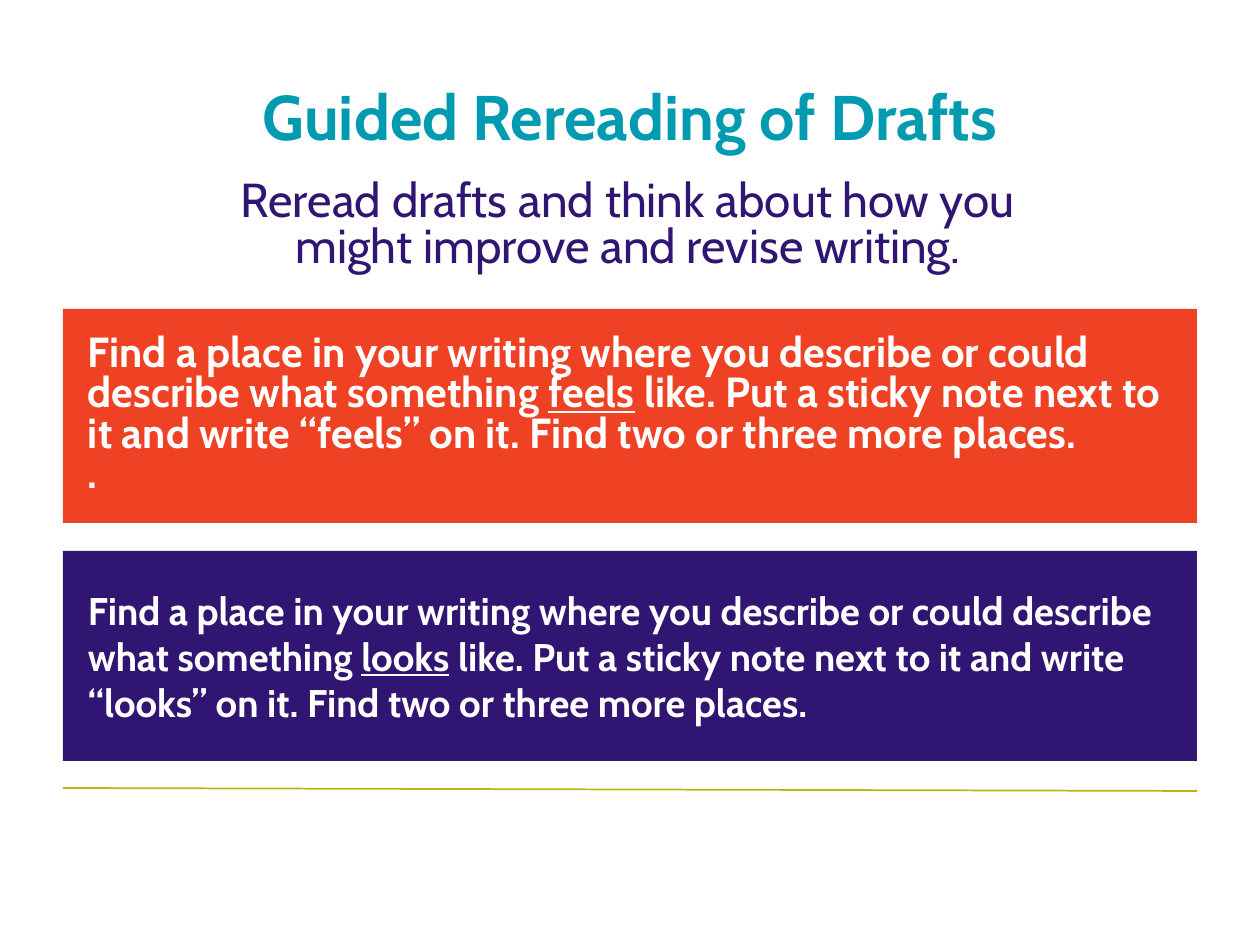
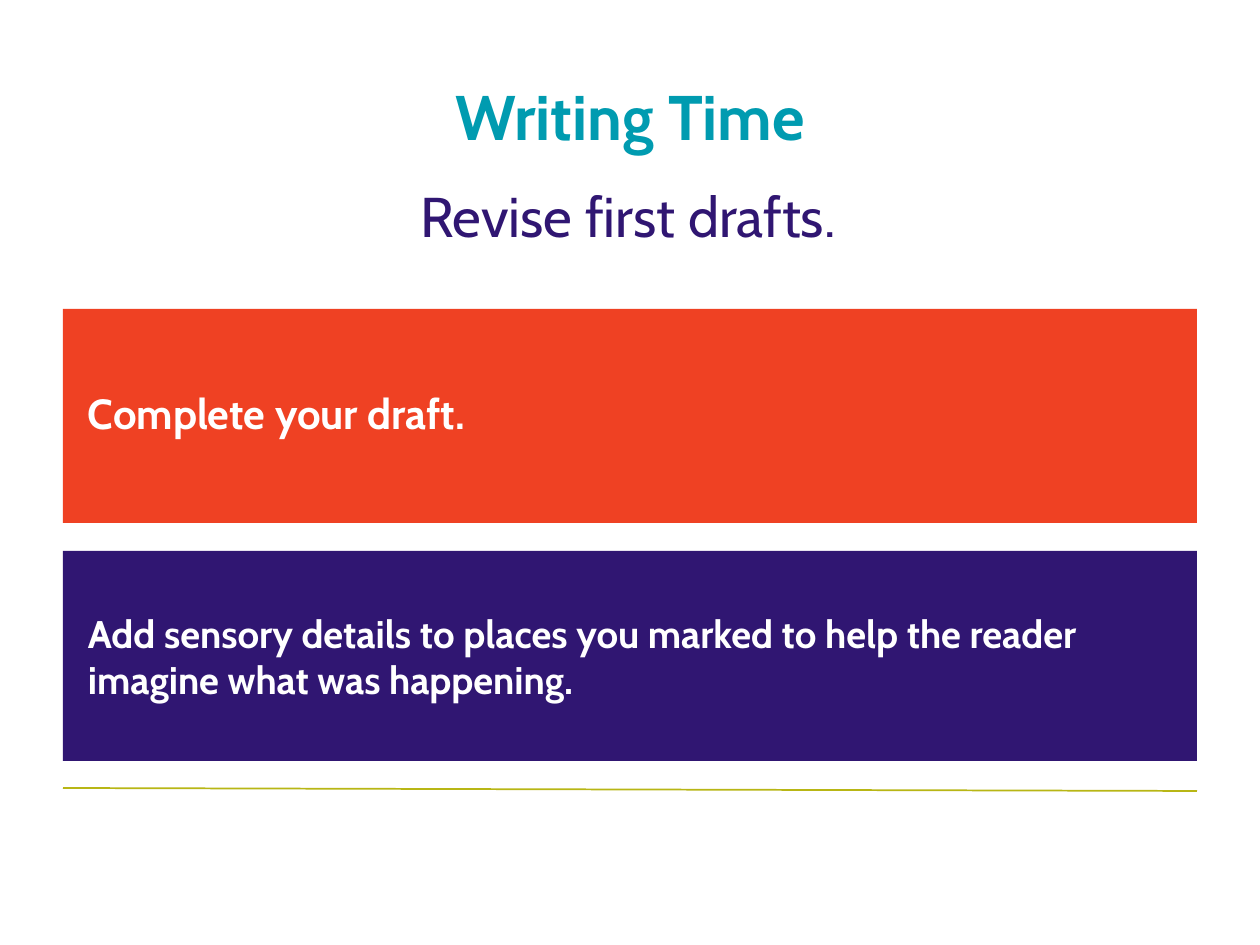
"""Build two writing-lesson slides with a title, a subtitle and two text bands."""
from lxml.etree import SubElement
from pptx import Presentation
from pptx.dml.color import RGBColor
from pptx.enum.shapes import MSO_CONNECTOR, MSO_SHAPE
from pptx.enum.text import MSO_ANCHOR, MSO_AUTO_SIZE, PP_ALIGN
from pptx.oxml.ns import qn
from pptx.util import Emu, Pt

LESSONS = [
    {
        "title": "Guided Rereading of Drafts",
        "subtitle": ("Reread drafts and think about how you\nmight improve and revise writing.", 27.2, 0.8),
        "bands": [
            ([[("Find a place in your writing where you describe or could describe what something ", False),
               ("feels", True),
               (" like. Put a sticky note next to it and write “feels” on it. Find two or three more places.", False)],
              [(".", False)]], 0.8),
            ([[("Find a place in your writing where you describe or could describe what something ", False),
               ("looks", True),
               (" like. Put a sticky note next to it and write “looks” on it. Find two or three more places.", False)]], 1.0),
        ],
    },
    {
        "title": "Writing Time",
        "subtitle": ("Revise first drafts.", 32, 1.0),
        "bands": [
            ([[("Complete your draft.", False)]], 0.9),
            ([[("Add sensory details to places you marked to help the reader imagine what was happening.", False)]], 1.0),
        ],
    },
]

COLORS = {"title": "009BB0", "orange": "EF4123", "purple": "301672", "rule": "B8B615", "white": "FFFFFF"}
FONT = "Cabin"
PIXELS_PER_INCH = 126
LEFT, WIDTH = 63, 1134
TITLE_AREA = (LEFT, 43, WIDTH, 144)
SUBTITLE_AREA = (93, 175, 1070, 108)
BAND_STYLES = [("orange", 309, 214, 24), ("purple", 551, 210, 22)]
RULE_ENDS = (LEFT, 788, LEFT + WIDTH, 791)


def px(length):
    """Turn pixels into EMU."""
    return Emu(round(length * 914400 / PIXELS_PER_INCH))


def area(*lengths):
    """Turn a list of pixel lengths into EMU."""
    return [px(length) for length in lengths]


def color(name):
    """Look up a palette colour."""
    return RGBColor.from_string(COLORS[name])


def set_frame(frame, anchor, horizontal, vertical):
    """Set wrapping, anchor and insets of a text frame."""
    frame.word_wrap = True
    frame.auto_size = MSO_AUTO_SIZE.NONE
    frame.vertical_anchor = anchor
    frame.margin_left = frame.margin_right = px(horizontal)
    frame.margin_top = frame.margin_bottom = px(vertical)


def format_paragraph(para, size, color_name, bold, align, spacing=1.0):
    """Set the font, alignment and line spacing of a paragraph."""
    para.alignment = align
    para.line_spacing = spacing
    para.space_before = Pt(0)
    para.font.name = FONT
    para.font.size = Pt(size)
    para.font.bold = bold
    para.font.color.rgb = color(color_name)


def add_rule(page):
    """Draw the thin line under the bands."""
    rule = page.shapes.add_connector(MSO_CONNECTOR.STRAIGHT, *area(*RULE_ENDS))
    rule.line.color.rgb = color("rule")
    rule.line.width = Pt(1)
    SubElement(rule.line._get_or_add_ln().getparent(), qn("a:effectLst"))


def add_title(page, text):
    """Place and format the title placeholder."""
    title = page.shapes.title
    title.left, title.top, title.width, title.height = area(*TITLE_AREA)
    set_frame(title.text_frame, MSO_ANCHOR.MIDDLE, 13, 6)
    para = title.text_frame.paragraphs[0]
    para.text = text
    format_paragraph(para, 36, "title", True, PP_ALIGN.CENTER)


def add_subtitle(page, text, size, spacing):
    """Add the centred line under the title."""
    box = page.shapes.add_textbox(*area(*SUBTITLE_AREA))
    set_frame(box.text_frame, MSO_ANCHOR.TOP, 13, 6)
    para = box.text_frame.paragraphs[0]
    para.text = text
    format_paragraph(para, size, "purple", False, PP_ALIGN.CENTER, spacing)


def add_band(page, style, paragraphs, spacing):
    """Add a filled band with its instructions."""
    fill, top, height, size = style
    band = page.shapes.add_shape(MSO_SHAPE.RECTANGLE, *area(LEFT, top, WIDTH, height))
    band.shadow.inherit = False
    band.fill.solid()
    band.fill.fore_color.rgb = color(fill)
    band.line.fill.background()
    frame = band.text_frame
    set_frame(frame, MSO_ANCHOR.MIDDLE, 25, 25)
    for index, spans in enumerate(paragraphs):
        para = frame.add_paragraph() if index else frame.paragraphs[0]
        format_paragraph(para, size, "white", True, PP_ALIGN.LEFT, spacing)
        for text, underlined in spans:
            span = para.add_run()
            span.text = text
            if underlined:
                span.font.underline = True


def main():
    """Build and save the deck."""
    deck = Presentation()
    deck.slide_width, deck.slide_height = area(1260, 945)
    for lesson in LESSONS:
        page = deck.slides.add_slide(deck.slide_layouts[5])
        add_rule(page)
        add_title(page, lesson["title"])
        for style, (paragraphs, spacing) in zip(BAND_STYLES, lesson["bands"]):
            add_band(page, style, paragraphs, spacing)
        add_subtitle(page, *lesson["subtitle"])
    deck.save("out.pptx")


if __name__ == "__main__":
    main()
